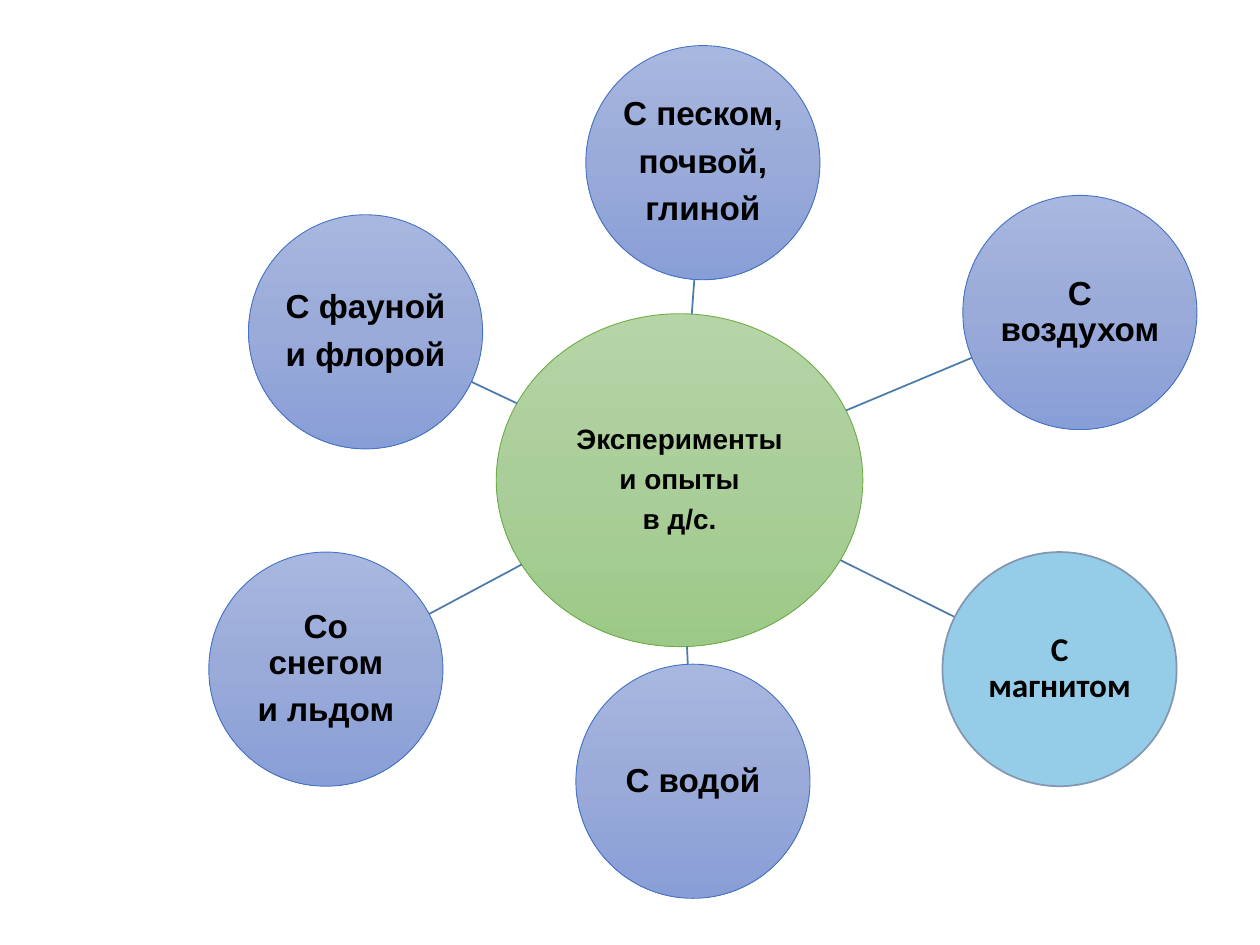
import copy
import math

from lxml import etree
from pptx import Presentation
from pptx import util as u
from pptx.dml.color import RGBColor
from pptx.enum import shapes, text
from pptx.oxml.ns import qn

BLUE = ("A8B7DF", "9AABD9", "889ED7")
GREEN = ("B5D5A7", "AACE9A", "9CC987")

# Hub and satellites in cm
HUB = (13.7, 9.68)
HUB_SIZE = (7.39, 6.71)
DIAMETER = 4.72

AIR_STYLE = {"fill": BLUE, "line": "4472C4", "width": 0.5, "font": "Arial"}
MAGNET_STYLE = {"fill": ("95CCE7",), "line": "8497B0", "width": 1,
                "font": "Calibri"}
SATELLITES = [
    ((14.17, 3.28), ["С песком,", "почвой,", "глиной"], AIR_STYLE),
    ((21.77, 6.3), ["С воздухом"], AIR_STYLE),
    ((21.36, 13.49), ["С магнитом"], MAGNET_STYLE),
    ((13.97, 15.75), ["С водой"], AIR_STYLE),
    ((6.57, 13.49), ["Со снегом", "и льдом"], AIR_STYLE),
    ((7.37, 6.69), ["С фауной", "и флорой"], AIR_STYLE),
]


def color(value):
    return RGBColor.from_string(value)


def write(tf, lines, size=19, font="Arial", fill="000000", bold=True):
    """Fill a text frame with one centred paragraph per line."""
    tf.word_wrap = True
    tf.vertical_anchor = text.MSO_ANCHOR.MIDDLE
    tf.margin_left = tf.margin_right = u.Cm(0.03)
    tf.margin_top = tf.margin_bottom = u.Cm(0.03)
    for i, line in enumerate(lines):
        p = tf.paragraphs[0] if i == 0 else tf.add_paragraph()
        p.alignment = text.PP_ALIGN.CENTER
        p.line_spacing = 0.9
        p.space_after = u.Pt(round(size * 0.35, 1))
        r = p.add_run()
        r.text = line
        r.font.size = u.Pt(size)
        r.font.name = font
        r.font.bold = bold
        r.font.color.rgb = color(fill)


def edge_point(center, size, target):
    """Point where the ray from center to target leaves the ellipse."""
    dx, dy = target[0] - center[0], target[1] - center[1]
    t = 1 / math.hypot(dx / (size[0] / 2), dy / (size[1] / 2))
    return center[0] + dx * t, center[1] + dy * t


class Diagram:
    def __init__(self, slide, spoke_color="497CAB"):
        self.slide = slide
        self.spoke_color = spoke_color

    def paint(self, sp, colors):
        if len(colors) == 1:
            sp.fill.solid()
            sp.fill.fore_color.rgb = color(colors[0])
            return
        sp.fill.gradient()
        sp.fill.gradient_angle = 270
        # The default gradient has two stops: add the middle one
        stops = sp._element.spPr.find(".//" + qn("a:gsLst"))
        stops.insert(1, copy.deepcopy(stops[0]))
        stops[1].set("pos", "50000")
        for stop, value in zip(sp.fill.gradient_stops, colors):
            stop.color.rgb = color(value)

    def bubble(self, center, size, lines, fill, line, width, font, pt=19):
        w, h = size
        sp = self.slide.shapes.add_shape(
            shapes.MSO_SHAPE.OVAL, u.Cm(center[0] - w / 2),
            u.Cm(center[1] - h / 2), u.Cm(w), u.Cm(h))
        sp.shadow.inherit = False
        self.paint(sp, fill)
        sp.line.color.rgb = color(line)
        sp.line.width = u.Pt(width)
        write(sp.text_frame, lines, size=pt, font=font)

    def spoke(self, start, end):
        c = self.slide.shapes.add_connector(
            shapes.MSO_CONNECTOR.STRAIGHT, *map(u.Cm, (*start, *end)))
        c.line.color.rgb = color(self.spoke_color)
        c.line.width = u.Pt(1)
        etree.SubElement(c._element.spPr, qn("a:effectLst"))


def main():
    prs = Presentation()
    prs.slide_width, prs.slide_height = u.Cm(25.4), u.Cm(19.05)
    s = prs.slides.add_slide(prs.slide_layouts[6])
    diagram = Diagram(s)

    # Hub
    diagram.bubble(HUB, HUB_SIZE, ["Эксперименты", "и опыты", "в д/с."],
                   GREEN, "70AD47", 0.5, "Arial", pt=16)

    # Satellites, each joined to the hub
    size = (DIAMETER, DIAMETER)
    for center, lines, style in SATELLITES:
        diagram.spoke(edge_point(HUB, HUB_SIZE, center),
                      edge_point(center, size, HUB))
        diagram.bubble(center, size, lines, **style)

    prs.save("out.pptx")


if __name__ == "__main__":
    main()
